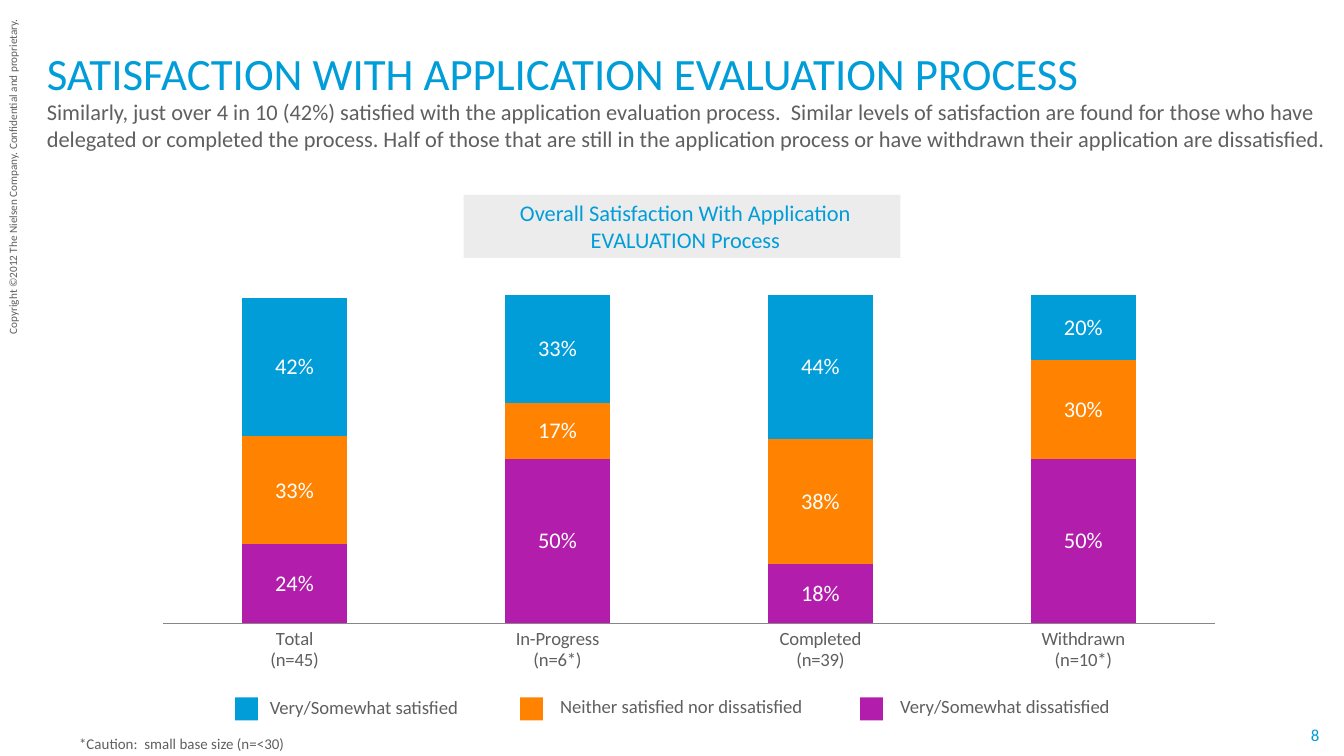
from lxml.etree import SubElement
from pptx import Presentation
from pptx.chart.data import CategoryChartData
from pptx.dml.color import RGBColor
from pptx.enum.chart import XL_CHART_TYPE, XL_LABEL_POSITION, XL_TICK_MARK
from pptx.enum.shapes import MSO_SHAPE
from pptx.enum.text import MSO_ANCHOR, MSO_AUTO_SIZE, PP_ALIGN
from pptx.oxml.ns import qn
from pptx.util import Inches, Pt

BLUE = RGBColor(0x00, 0x9D, 0xD9)
ORANGE = RGBColor(0xFF, 0x83, 0x00)
PURPLE = RGBColor(0xB2, 0x1D, 0xAC)
GRAY = RGBColor(0x5F, 0x5F, 0x5F)
AXIS_GRAY = RGBColor(0x87, 0x87, 0x87)
PALE_GRAY = RGBColor(0xEC, 0xEC, 0xEC)
WHITE = RGBColor(0xFF, 0xFF, 0xFF)
FONT = "Calibri"

CATEGORIES = ["Total\n(n=45)", "In-Progress\n(n=6*)", "Completed\n(n=39)", "Withdrawn\n(n=10*)"]
SERIES = [
    ("Series 1", [0.24, 0.5, 0.18, 0.5], PURPLE),
    ("Series 2", [0.33, 0.17, 0.38, 0.3], ORANGE),
    ("Series 3", [0.42, 0.33, 0.44, 0.2], BLUE),
]
PLOT_AREA = {"x": 0.137, "y": 0.038, "w": 0.829, "h": 0.697}
LEGEND = [
    (1.75, 1.91, 5.13, 1.67, "Very/Somewhat satisfied", BLUE),
    (3.87, 4.07, 5.12, 2.76, "Neither satisfied nor dissatisfied", ORANGE),
    (6.4, 6.6, 5.12, 2.06, "Very/Somewhat dissatisfied", PURPLE),
]


def style_font(font, size, color):
    font.name = FONT
    font.size = Pt(size)
    font.color.rgb = color


def write(frame, text, size=12, color=GRAY, align=PP_ALIGN.LEFT, anchor=MSO_ANCHOR.TOP,
          margins=(0.1, 0.05, 0.1, 0.05), wrap=True, grow=False):
    frame.word_wrap = wrap
    frame.auto_size = MSO_AUTO_SIZE.SHAPE_TO_FIT_TEXT if grow else MSO_AUTO_SIZE.NONE
    frame.vertical_anchor = anchor
    frame.margin_left, frame.margin_top, frame.margin_right, frame.margin_bottom = map(Inches, margins)
    para = frame.paragraphs[0]
    para.alignment = align
    span = para.add_run()
    span.text = text
    style_font(span.font, size, color)


class SlideBuilder:
    """Draws styled elements on the current slide."""

    def __init__(self, page):
        self.page = page

    def text(self, area, text, rotation=0, **style):
        box = self.page.shapes.add_textbox(*map(Inches, area))
        box.rotation = rotation
        write(box.text_frame, text, **style)

    def rectangle(self, area, fill):
        box = self.page.shapes.add_shape(MSO_SHAPE.RECTANGLE, *map(Inches, area))
        box.shadow.inherit = False
        box.fill.solid()
        box.fill.fore_color.rgb = fill
        box.line.fill.background()
        return box

    def stacked_chart(self, area):
        data = CategoryChartData(number_format="0%")
        data.categories = CATEGORIES
        for name, values, _ in SERIES:
            data.add_series(name, values)
        chart = self.page.shapes.add_chart(
            XL_CHART_TYPE.COLUMN_STACKED, *map(Inches, area), data).chart
        style_font(chart.font, 10, GRAY)
        chart.has_legend = False
        chart.has_title = False

        plot = chart.plots[0]
        plot.gap_width = 150
        plot.overlap = 100
        plot.vary_by_categories = False
        for series, (_, _, color) in zip(plot.series, SERIES):
            series.format.fill.solid()
            series.format.fill.fore_color.rgb = color
            labels = series.data_labels
            labels.show_value = True
            labels.number_format = "0%"
            labels.number_format_is_linked = False
            labels.position = XL_LABEL_POSITION.CENTER
            style_font(labels.font, 12, WHITE)

        value_axis = chart.value_axis
        value_axis.minimum_scale = 0
        value_axis.maximum_scale = 1
        value_axis.has_major_gridlines = False
        value_axis.visible = False
        category_axis = chart.category_axis
        category_axis.major_tick_mark = XL_TICK_MARK.NONE
        category_axis.format.line.color.rgb = AXIS_GRAY
        category_axis.format.line.width = Pt(0.75)
        style_font(category_axis.tick_labels.font, 10, GRAY)
        self.place_plot(chart)

    def place_plot(self, chart):
        plot_area = chart.element.find(qn("c:chart")).find(qn("c:plotArea"))
        for layout in plot_area.findall(qn("c:layout")):
            plot_area.remove(layout)
        layout = SubElement(plot_area, qn("c:layout"))
        plot_area.insert(0, layout)
        manual = SubElement(layout, qn("c:manualLayout"))
        SubElement(manual, qn("c:layoutTarget")).set("val", "inner")
        for side in "xy":
            SubElement(manual, qn(f"c:{side}Mode")).set("val", "edge")
        for side, share in PLOT_AREA.items():
            SubElement(manual, qn(f"c:{side}")).set("val", str(share))

    def legend_entry(self, key_left, text_left, text_top, width, text, color):
        self.rectangle((key_left, 5.19, 0.17, 0.17), color)
        self.text((text_left, text_top, width, 0.27), text, size=10, grow=True)


def main():
    deck = Presentation()
    deck.slide_width = Inches(10)
    deck.slide_height = Inches(10 * 9 / 16)
    builder = SlideBuilder(deck.slides.add_slide(deck.slide_layouts[6]))

    builder.text((-1.2, 1.19, 2.59, 0.2),
                 "Copyright ©2012 The Nielsen Company. Confidential and proprietary.",
                 rotation=270, size=6, wrap=False, grow=True)
    builder.text((9.71, 5.39, 0.15, 0.15), "8", size=9, color=BLUE, align=PP_ALIGN.CENTER,
                 anchor=MSO_ANCHOR.MIDDLE, margins=(0, 0, 0, 0), wrap=False, grow=True)
    builder.stacked_chart((-0.08, 2.06, 9.44, 3.51))
    builder.text((0.25, 0.27, 9.5, 0.47), "SATISFACTION WITH APPLICATION EVALUATION PROCESS",
                 size=24, color=BLUE, anchor=MSO_ANCHOR.BOTTOM, margins=(0.1, 0, 0.1, 0))
    builder.text((0.25, 0.73, 9.75, 0.26),
                 "Similarly, just over 4 in 10 (42%) satisfied with the application evaluation "
                 "process.  Similar levels of satisfaction are found for those who have delegated "
                 "or completed the process. Half of those that are still in the application "
                 "process or have withdrawn their application are dissatisfied.",
                 margins=(0.1, 0, 0.1, 0))
    heading = builder.rectangle((3.45, 1.45, 3.25, 0.47), PALE_GRAY)
    write(heading.text_frame, "Overall Satisfaction With Application EVALUATION Process",
          color=BLUE, align=PP_ALIGN.CENTER, anchor=MSO_ANCHOR.MIDDLE, margins=(0.05, 0, 0, 0))
    for entry in LEGEND:
        builder.legend_entry(*entry)
    builder.text((0.49, 5.42, 5.06, 0.24), "*Caution:  small base size (n=<30)", size=8, grow=True)

    deck.save("out.pptx")


if __name__ == "__main__":
    main()
